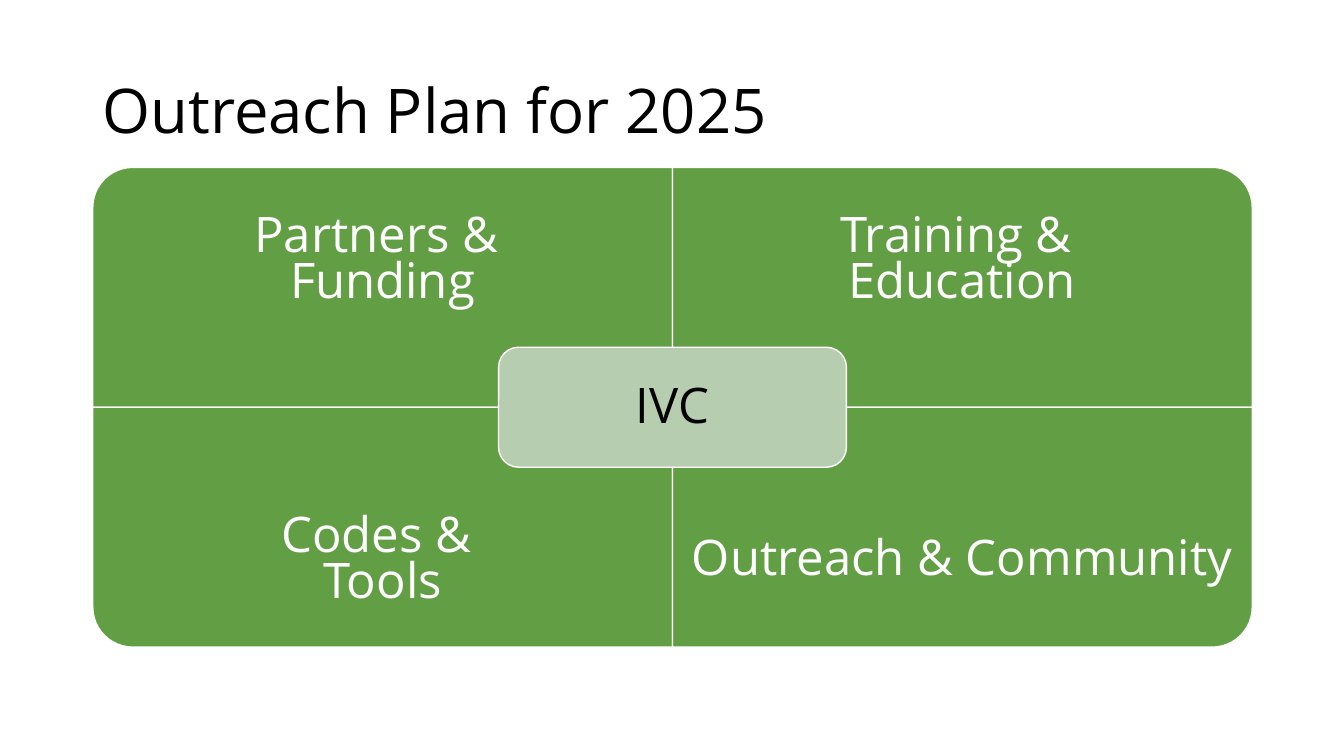
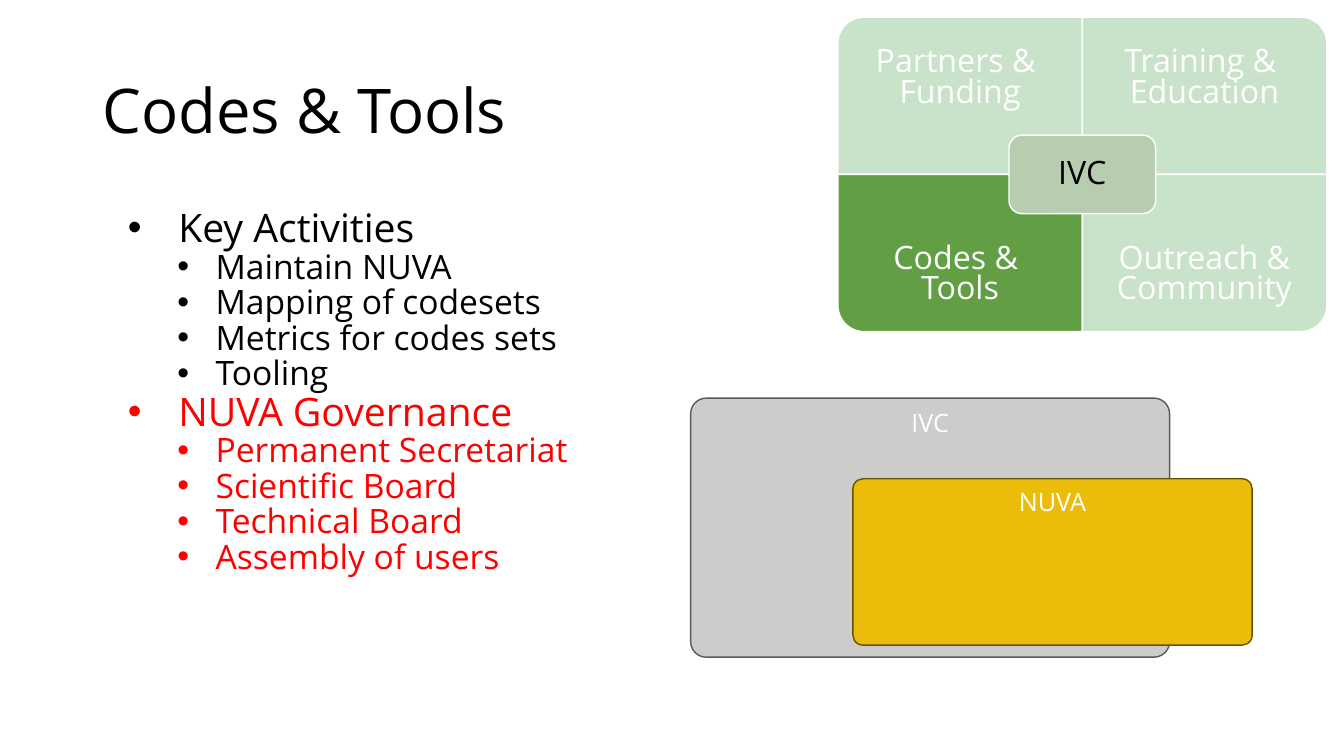
from pptx import Presentation
from pptx.dml.color import RGBColor
from pptx.enum.shapes import MSO_SHAPE
from pptx.enum.text import MSO_ANCHOR, PP_ALIGN
from pptx.oxml.ns import qn
from pptx.util import Emu, Pt
from lxml.etree import SubElement

EMU_PER_PX = 9144
FONT = "Open Sans"
BLACK = RGBColor(0x00, 0x00, 0x00)
WHITE = RGBColor(0xFF, 0xFF, 0xFF)
RED = RGBColor(0xFF, 0x00, 0x00)
GREEN = RGBColor(0x62, 0x9F, 0x44)
PALE_GREEN = RGBColor(0xC9, 0xE2, 0xCA)
SAGE = RGBColor(0xB7, 0xCD, 0xB0)
GRAY = RGBColor(0xCC, 0xCC, 0xCB)
DARK_GRAY = RGBColor(0x59, 0x59, 0x59)
GOLD = RGBColor(0xEC, 0xBC, 0x0A)
BROWN = RGBColor(0x67, 0x52, 0x04)

QUADRANTS = [
    ("Partners & \vFunding", 0, 0, 270),
    ("Training & \vEducation", 1, 0, 0),
    ("Codes & \vTools", 0, 1, 180),
    ("Outreach & Community", 1, 1, 90),
]
TOPICS = [
    ("Key Activities", BLACK,
     ["Maintain NUVA", "Mapping of codesets", "Metrics for codes sets", "Tooling"]),
    ("NUVA Governance", RED,
     ["Permanent Secretariat", "Scientific Board", "Technical Board", "Assembly of users"]),
]
BULLET_LEVELS = [
    {"size": 28, "margin": 75, "indent": -50},
    {"size": 24, "margin": 112, "indent": -38},
]


def px(length):
    """Turn px into EMU."""
    return Emu(round(length * EMU_PER_PX))


def apply(target, values):
    """Set each attribute in values on target."""
    for name, value in values.items():
        setattr(target, name, value)


def write(para, text, size, color, **layout):
    """Fill a paragraph with text in one style."""
    para.text = text
    apply(para, layout)
    for span in para.runs:
        apply(span.font, {"name": FONT, "size": Pt(size)})
        span.font.color.rgb = color


def add_text_box(page, box, **frame_format):
    """Add a wrapping text box and return its frame."""
    frame = page.shapes.add_textbox(*map(px, box)).text_frame
    apply(frame, {"word_wrap": True, **frame_format})
    return frame


def add_panel(page, kind, box, fill, line):
    """Add a flat filled shape with a thin outline."""
    panel = page.shapes.add_shape(kind, *map(px, box))
    panel.shadow.inherit = False
    panel.fill.solid()
    panel.fill.fore_color.rgb = fill
    panel.line.color.rgb = line
    panel.line.width = Pt(1)
    return panel


def add_title(page, text):
    """Add the slide title."""
    frame = add_text_box(page, (92, 40, 1150, 145), vertical_anchor=MSO_ANCHOR.MIDDLE)
    write(frame.paragraphs[0], text, 44, BLACK, line_spacing=0.9)


def add_quadrant(page, box, text, angle, fill, size):
    """Add one matrix cell with its outer corner rounded, and its label."""
    left, top, width, height = box
    across, down = (height, width) if angle % 180 else (width, height)
    middle_x, middle_y = left + width / 2, top + height / 2
    outline = (middle_x - across / 2, middle_y - down / 2, across, down)
    add_panel(page, MSO_SHAPE.ROUND_1_RECTANGLE, outline, fill, WHITE).rotation = angle
    is_lower = angle in (90, 180)
    label_top = top + (height / 4 if is_lower else 0) + size / 8
    frame = add_text_box(page, (left, label_top, width, height * 0.75),
                         vertical_anchor=MSO_ANCHOR.MIDDLE)
    write(frame.paragraphs[0], text, size, WHITE,
          alignment=PP_ALIGN.CENTER, line_spacing=0.79)


def add_matrix(page, box, size, active=None):
    """Add the four-part plan around its hub, paling all but an active part."""
    left, top, width, height = box
    cell_width, cell_height = width / 2, height / 2
    for text, column, row, angle in QUADRANTS:
        cell = (left + column * cell_width, top + row * cell_height, cell_width, cell_height)
        fill = GREEN if active is None or text == active else PALE_GREEN
        add_quadrant(page, cell, text, angle, fill, size)
    hub_box = (left + width * 0.35, top + height * 0.375, width * 0.3, height * 0.25)
    hub = add_panel(page, MSO_SHAPE.ROUNDED_RECTANGLE, hub_box, SAGE, WHITE)
    hub.text_frame.vertical_anchor = MSO_ANCHOR.MIDDLE
    write(hub.text_frame.paragraphs[0], "IVC", size, BLACK,
          alignment=PP_ALIGN.CENTER, line_spacing=0.9)


def add_bullet(para, text, color, level):
    """Write one bulleted line at a level."""
    style = BULLET_LEVELS[level]
    properties = para._p.get_or_add_pPr()
    properties.set("marL", str(px(style["margin"])))
    properties.set("indent", str(px(style["indent"])))
    SubElement(properties, qn("a:buFont")).set("typeface", "Arial")
    SubElement(properties, qn("a:buChar")).set("char", "•")
    write(para, text, style["size"], color, level=level, line_spacing=0.88)


def add_topics(page, box):
    """Add the two-level bullet list."""
    frame = add_text_box(page, box)
    lines = [(text, color, level)
             for heading, color, items in TOPICS
             for text, level in [(heading, 0)] + [(item, 1) for item in items]]
    for number, line in enumerate(lines):
        para = frame.add_paragraph() if number else frame.paragraphs[0]
        add_bullet(para, *line)


def add_scope(page, box):
    """Add the overlapping organisation boxes."""
    left, top, width, height = box
    scopes = [
        ("IVC", (left, top, width, height), GRAY, DARK_GRAY),
        ("NUVA", (left + 161, top + 80, 396, 165), GOLD, BROWN),
    ]
    for text, area, fill, line in scopes:
        panel = add_panel(page, MSO_SHAPE.ROUNDED_RECTANGLE, area, fill, line)
        panel.adjustments[0] = 0.06
        panel.text_frame.vertical_anchor = MSO_ANCHOR.TOP
        write(panel.text_frame.paragraphs[0], text, 18, WHITE, alignment=PP_ALIGN.CENTER)


def build_plan(page):
    """Build the plan overview."""
    add_title(page, "Outreach Plan for 2025")
    add_matrix(page, (92, 166, 1150, 476), 35)


def build_codes(page):
    """Build the codes and tools detail."""
    add_title(page, "Codes & Tools")
    add_topics(page, (92, 203, 556, 476))
    add_matrix(page, (831, 17, 485, 312), 23, active="Codes & \vTools")
    add_scope(page, (685, 395, 475, 257))


def main():
    """Build and save the deck."""
    deck = Presentation()
    apply(deck, {"slide_width": px(1333), "slide_height": px(750)})
    for build in (build_plan, build_codes):
        build(deck.slides.add_slide(deck.slide_layouts[6]))
    deck.save("out.pptx")


if __name__ == "__main__":
    main()
